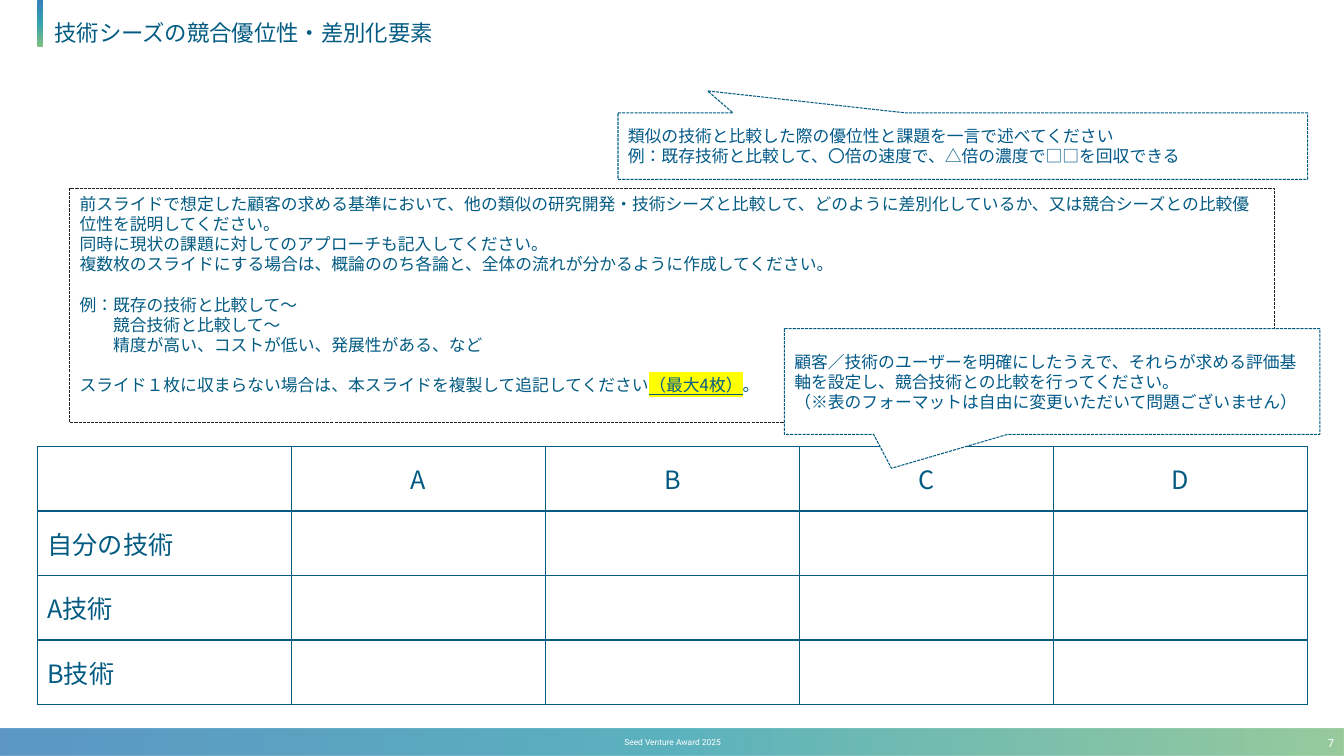
"""Build the slide on the competitive edge of a technology seed."""
import pptx
import pptx.dml.color
import pptx.enum.dml
import pptx.enum.lang
import pptx.enum.shapes
import pptx.enum.text
import pptx.oxml
import pptx.oxml.ns
import pptx.util
import lxml.etree

Inches = pptx.util.Inches
Pt = pptx.util.Pt
qn = pptx.oxml.ns.qn
Align = pptx.enum.text.PP_ALIGN
Anchor = pptx.enum.text.MSO_ANCHOR
Kind = pptx.enum.shapes.MSO_SHAPE
NAVY, BLUE, WHITE = "035B82", "005988", "FFFFFF"
NOTO, ROBOTO = "Noto Sans CJK JP", "Roboto"


def tint(color, code):
    color.rgb = pptx.dml.color.RGBColor.from_string(code)


def write(frame, text, size, code, face=NOTO, align=Align.LEFT, anchor=Anchor.MIDDLE):
    frame.text = text.replace("|", "")
    frame.word_wrap = True
    frame.vertical_anchor = anchor
    for para, line in zip(frame.paragraphs, text.split("\n")):
        parts = line.split("|")
        para.text = parts[0]
        for part in parts[1:]:
            para.add_run().text = part
        para.alignment = align
        for run in para.runs:
            run.font.size = Pt(size)
            tint(run.font.color, code)
            run.font.name = face
            run.font.language_id = pptx.enum.lang.MSO_LANGUAGE_ID.JAPANESE
            east = lxml.etree.SubElement(run.font._element, qn("a:ea"))
            east.set("typeface", face)


deck = pptx.Presentation()
deck.slide_width, deck.slide_height = Inches(13.33), Inches(7.5)
slide = deck.slides.add_slide(deck.slide_layouts[5])
shapes = slide.shapes

bars = [
    ((0.37, -0.01, 0.06, 0.47), 90, 100),
    ((0, 7.23, 13.33, 0.27), 0, 80),
]
for place, angle, alpha in bars:
    bar = shapes.add_shape(Kind.RECTANGLE, *map(Inches, place))
    bar.shadow.inherit = False
    bar.line.fill.background()
    bar.fill.gradient()
    grad = bar._element.spPr.find(qn("a:gradFill"))
    stops = grad.find(qn("a:gsLst"))
    for stop in list(stops):
        stops.remove(stop)
    for spot, code in ((0, "347EB8"), (50, "34A0AF"), (100, "7FBE85")):
        stop = lxml.etree.SubElement(stops, qn("a:gs"), pos=str(spot * 1000))
        color = lxml.etree.SubElement(stop, qn("a:srgbClr"), val=code)
        lxml.etree.SubElement(color, qn("a:alpha"), val=str(alpha * 1000))
    grad.find(qn("a:lin")).set("ang", str(angle * 60000))

title = shapes.title
title.left, title.top = Inches(0.42), Inches(0)
title.width, title.height = Inches(12.55), Inches(0.46)
frame = title.text_frame
write(frame, "技術シーズの競合優位性・差別化要素", 16, NAVY, ROBOTO, anchor=Anchor.BOTTOM)
frame.margin_left, frame.margin_bottom = Inches(0.12), 0
frame.paragraphs[0].line_spacing = 0.9

notes = [
    ((5.18, 7.26, 2.98, 0.2), "Seed Venture Award 2025", 6, Align.CENTER),
    ((12.21, 7.17, 1.12, 0.4), "7", 8, Align.RIGHT),
]
for place, text, size, align in notes:
    note = shapes.add_textbox(*map(Inches, place))
    write(note.text_frame, text, size, WHITE, ROBOTO, align)

guide = """前スライドで想定した顧客の求める基準において、他の類似の研究開発・技術シーズと比較して、どのように差別化しているか、又は競合シーズとの比較優位性を説明してください。
同時に現状の課題に対してのアプローチも記入してください。
複数枚のスライドにする場合は、概論ののち各論と、全体の流れが分かるように作成してください。
例：既存の技術と比較して～
競合技術と比較して～
精度が高い、コストが低い、発展性がある、など
スライド１枚に収まらない場合は、本スライドを複製して追記してください|（最大4枚）|。"""
body = shapes.add_shape(
    Kind.RECTANGLE, Inches(0.69), Inches(1.87), Inches(11.95), Inches(2.32)
)
body.fill.background()
write(body.text_frame, guide, 12, NAVY, anchor=Anchor.TOP)
paras = body.text_frame.paragraphs
for para in (paras[3], paras[6]):
    para.space_before = Pt(14.4)
for para in paras[4:6]:
    para._p.get_or_add_pPr().set("marL", str(Pt(24)))
limit = paras[6].runs[1].font
limit.underline = True
mark = lxml.etree.Element(qn("a:highlight"))
lxml.etree.SubElement(mark, qn("a:srgbClr"), val="FFFF00")
limit._element.find(qn("a:latin")).addprevious(mark)

left, top, wide, high = 0.37, 4.43, 12.6, 2.56
rows = [["", "A", "B", "C", "D"], ["自分の技術"], ["A技術"], ["B技術"]]
grid = shapes.add_table(4, 5, *map(Inches, (left, top, wide, high))).table
grid.first_row = grid.horz_banding = False
for r, row in enumerate(rows):
    for c in range(5):
        cell = grid.cell(r, c)
        cell.fill.background()
        cell.vertical_anchor = Anchor.MIDDLE
        if c < len(row) and row[c]:
            align = Align.LEFT if c == 0 else Align.CENTER
            write(cell.text_frame, row[c], 18, NAVY, align=align)
        props = cell._tc.get_or_add_tcPr()
        for spot, side in enumerate(("lnL", "lnR", "lnT", "lnB")):
            edge = lxml.etree.Element(qn("a:" + side), w=str(Pt(1)))
            fill = lxml.etree.SubElement(edge, qn("a:solidFill"))
            lxml.etree.SubElement(fill, qn("a:srgbClr"), val=NAVY)
            props.insert(spot, edge)

hints = [
    (
        (6.13, 1.12, 6.84, 0.66),
        (-0.37, -0.83),
        "類似の技術と比較した際の優位性と課題を一言で述べてください\n"
        "例：既存技術と比較して、〇倍の速度で、△倍の濃度で□□を回収できる",
    ),
    (
        (7.78, 3.26, 5.31, 1.05),
        (-0.3, 0.82),
        "顧客／技術のユーザーを明確にしたうえで、それらが求める評価基軸を設定し、競合技術との比較を行ってください。\n"
        "（※表のフォーマットは自由に変更いただいて問題ございません）",
    ),
]
boxes = [(body, "202020")]
for place, tip, text in hints:
    hint = shapes.add_shape(Kind.RECTANGULAR_CALLOUT, *map(Inches, place))
    hint.adjustments[0], hint.adjustments[1] = tip
    hint.fill.solid()
    tint(hint.fill.fore_color, WHITE)
    write(hint.text_frame, text, 12, BLUE)
    boxes.append((hint, NAVY))

for box, code in boxes:
    box.shadow.inherit = False
    tint(box.line.color, code)
    box.line.width = Pt(0.75)
    box.line.dash_style = pptx.enum.dml.MSO_LINE.SQUARE_DOT
    for para in box.text_frame.paragraphs:
        para.line_spacing = Pt(14.4)

deck.save("out.pptx")
